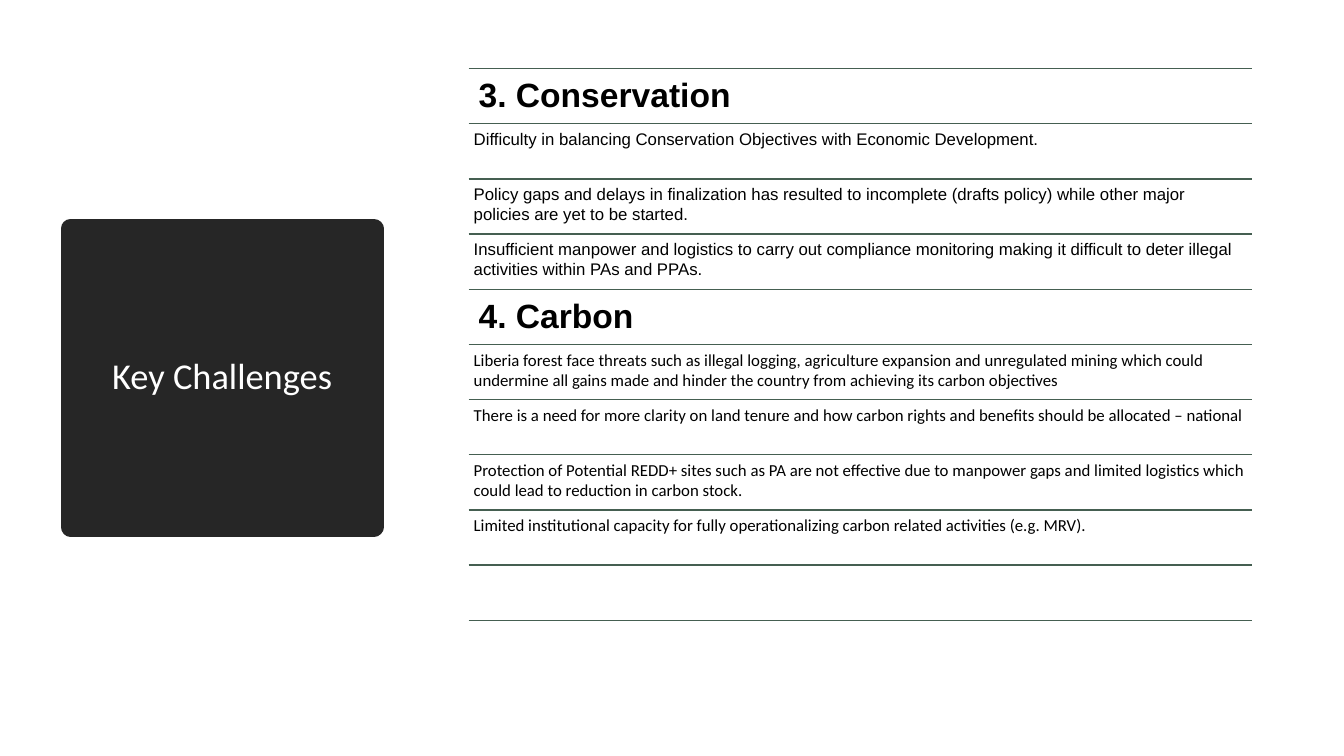
import pptx
import pptx.util
from lxml import etree
from pptx.dml.color import RGBColor
from pptx.enum.shapes import MSO_CONNECTOR, MSO_SHAPE
from pptx.enum.text import MSO_ANCHOR, PP_ALIGN
from pptx.oxml.ns import qn

Pt = pptx.util.Pt

TITLE = "Key Challenges"
SECTIONS = [
    ("3. Conservation", "Arial", [
        "Difficulty in balancing Conservation Objectives with Economic Development.",
        "Policy gaps and delays in finalization has resulted to incomplete (drafts policy) "
        "while other major policies are yet to be started.",
        "Insufficient manpower and logistics to carry out compliance monitoring making it "
        "difficult to deter illegal activities within PAs and PPAs.",
    ]),
    ("4. Carbon", "Calibri", [
        "Liberia forest face threats such as illegal logging, agriculture expansion and "
        "unregulated mining which could undermine all gains made and hinder the country "
        "from achieving its carbon objectives",
        "There is a need for more clarity on land tenure and how carbon rights and "
        "benefits should be allocated – national",
        "Protection of Potential REDD+ sites such as PA are not effective due to manpower "
        "gaps and limited logistics which could lead to reduction in carbon stock.",
        "Limited institutional capacity for fully operationalizing carbon related "
        "activities (e.g. MRV).",
    ]),
]
EMPTY_ROWS = 1

DARK, GREEN, BLACK, WHITE = "262626", "455F51", "000000", "FFFFFF"
PANEL = (50.4, 163.4, 216.7, 213.1)
PANEL_BORDER = 13.75
LIST_LEFT, LIST_TOP, LIST_WIDTH, ROW_HEIGHT = 334.8, 49, 559.4, 39.4

HEADING = {"name": "Arial", "size": Pt(24), "bold": True}
BODY = {"size": Pt(12), "bold": False}
TITLE_FONT = {"name": "Calibri", "size": Pt(26), "bold": False}


def paint(color_format, hex_color):
    color_format.rgb = RGBColor.from_string(hex_color)


def write(frame, text, font, color, spacing=1.0):
    frame.word_wrap = True
    para = frame.paragraphs[0]
    para.line_spacing = spacing
    span = para.add_run()
    span.text = text
    for name, value in font.items():
        setattr(span.font, name, value)
    paint(span.font.color, color)
    return para


def add_panel(slide):
    panel = slide.shapes.add_shape(MSO_SHAPE.RECTANGLE, *map(Pt, PANEL))
    panel.shadow.inherit = False
    panel.fill.solid()
    paint(panel.fill.fore_color, DARK)
    paint(panel.line.color, DARK)
    panel.line.width = Pt(PANEL_BORDER)
    # A round join softens the corners of the thick border.
    etree.SubElement(panel.line._get_or_add_ln(), qn("a:round"))
    panel.text_frame.vertical_anchor = MSO_ANCHOR.MIDDLE
    para = write(panel.text_frame, TITLE, TITLE_FONT, WHITE, 0.9)
    para.alignment = PP_ALIGN.CENTER


def add_rule(slide, top):
    rule = slide.shapes.add_connector(
        MSO_CONNECTOR.STRAIGHT,
        Pt(LIST_LEFT), Pt(top), Pt(LIST_LEFT + LIST_WIDTH), Pt(top))
    paint(rule.line.color, GREEN)
    rule.line.width = Pt(1)
    etree.SubElement(rule._element.spPr, qn("a:effectLst"))


def add_row(slide, top, text, font, inset, spacing):
    box = slide.shapes.add_textbox(
        Pt(LIST_LEFT), Pt(top), Pt(LIST_WIDTH), Pt(ROW_HEIGHT))
    for side in ("left", "top", "right", "bottom"):
        setattr(box.text_frame, f"margin_{side}", Pt(inset))
    write(box.text_frame, text, font, BLACK, spacing)


def main():
    deck = pptx.Presentation()
    deck.slide_width, deck.slide_height = Pt(960), Pt(540)
    slide = deck.slides.add_slide(deck.slide_layouts[6])
    add_panel(slide)

    rows = []
    for heading, body_font, points in SECTIONS:
        rows.append((heading, HEADING, 7.2, 0.9))
        rows += [(point, {**BODY, "name": body_font}, 3.6, 1.0) for point in points]

    for index in range(len(rows) + EMPTY_ROWS + 1):
        top = LIST_TOP + index * ROW_HEIGHT
        add_rule(slide, top)
        if index < len(rows):
            add_row(slide, top, *rows[index])

    deck.save("out.pptx")


if __name__ == "__main__":
    main()
